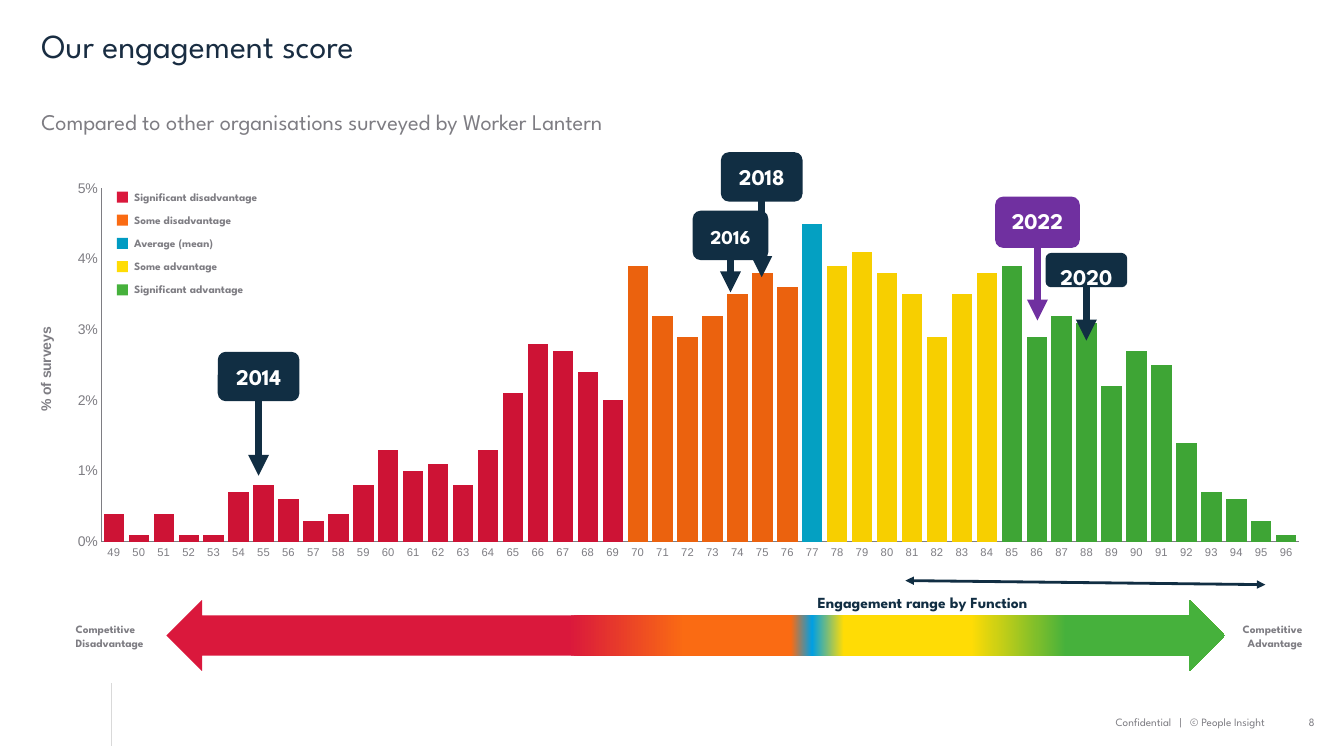
from itertools import chain, repeat

from lxml.etree import SubElement
from pptx import Presentation
from pptx.chart.data import CategoryChartData
from pptx.dml.color import RGBColor
from pptx.enum.chart import XL_CHART_TYPE as ChartType, XL_TICK_MARK as TickMark
from pptx.enum.shapes import MSO_CONNECTOR as Connector, MSO_SHAPE as Shape
from pptx.enum.text import MSO_ANCHOR as Anchor, MSO_AUTO_SIZE as AutoSize, PP_ALIGN as Align
from pptx.oxml.ns import qn
from pptx.util import Inches, Pt

NAVY, GREY, PURPLE, WHITE = "112E43", "7E7D83", "7030A0", "FFFFFF"
LEGEND = [
    ("Significant disadvantage", "DA183C"),
    ("Some disadvantage", "FA6B13"),
    ("Average (mean)", "009BC2"),
    ("Some advantage", "FFDC05"),
    ("Significant advantage", "46B13C"),
]
BAR_BANDS = [("CD1335", 21), ("EB620E", 7), ("04A0C2", 1), ("F7CF00", 7), ("3EA535", 12)]
FIRST_SCORE = 49
SURVEY_SHARES = [
    0.004, 0.001, 0.004, 0.001, 0.001, 0.007, 0.008, 0.006, 0.003, 0.004, 0.008, 0.013,
    0.010, 0.011, 0.008, 0.013, 0.021, 0.028, 0.027, 0.024, 0.020, 0.039, 0.032, 0.029,
    0.032, 0.035, 0.038, 0.036, 0.045, 0.039, 0.041, 0.038, 0.035, 0.029, 0.035, 0.038,
    0.039, 0.029, 0.032, 0.031, 0.022, 0.027, 0.025, 0.014, 0.007, 0.006, 0.003, 0.001,
]
SCALE_STOPS = [
    (38, "DA183C"), (49, "FA6B13"), (59, "FA6B13"), (61, "009FE3"),
    (64, "FFDC05"), (76, "FFDC05"), (85, "46B13C"), (100, "46B13C"),
]
YEAR_MARKERS = [
    ("2022", 9.87, 1.95, 0.84, 0.51, 2.25, 3.18, PURPLE, 16),
    ("2014", 2.16, 3.49, 0.81, 0.49, 3.79, 4.72, NAVY, 16),
    ("2016", 6.87, 2.09, 0.75, 0.49, 2.28, 2.90, NAVY, 14),
    ("2020", 10.37, 2.51, 0.81, 0.34, 2.72, 3.38, NAVY, 16),
    ("2018", 7.15, 1.51, 0.81, 0.49, 1.81, 2.75, NAVY, 16),
]


def rgb(color):
    return RGBColor.from_string(color)


def set_font(font, size, color, name, bold=False):
    font.size, font.name, font.bold = Pt(size), name, bold
    font.color.rgb = rgb(color)


def write(shape, text, size=8, color=GREY, bold=False, align=Align.LEFT, spacing=None,
          wrap=True, anchor=Anchor.TOP, insets=(0, 0, 0, 0), font="League Spartan"):
    frame = shape.text_frame
    frame.text = text
    frame.auto_size, frame.word_wrap, frame.vertical_anchor = AutoSize.NONE, wrap, anchor
    frame.margin_left, frame.margin_top, frame.margin_right, frame.margin_bottom = map(Inches, insets)
    for paragraph in frame.paragraphs:
        paragraph.alignment = align
        if spacing:
            paragraph.line_spacing = Pt(spacing)
        for run in paragraph.runs:
            set_font(run.font, size, color, font, bold)


class ScoreSlide:
    """Holds the current slide and draws its elements in the report style."""

    def __init__(self, presentation):
        self.slide = presentation.slides.add_slide(presentation.slide_layouts[5])
        self.shapes = self.slide.shapes

    def title(self, text, *box):
        title = self.shapes.title
        title.left, title.top, title.width, title.height = map(Inches, box)
        write(title, text, size=24, color="192D42", spacing=28)

    def label(self, text, *box, **style):
        write(self.shapes.add_textbox(*map(Inches, box)), text, **style)

    def block(self, kind, box, color=None, adjustments=()):
        shape = self.shapes.add_shape(kind, *map(Inches, box))
        shape.shadow.inherit = False
        shape.line.fill.background()
        for index, value in enumerate(adjustments):
            shape.adjustments[index] = value
        if color:
            shape.fill.solid()
            shape.fill.fore_color.rgb = rgb(color)
        return shape

    def line(self, start, end, color, width, arrows=()):
        line = self.shapes.add_connector(Connector.STRAIGHT, *map(Inches, start + end))
        line.line.color.rgb = rgb(color)
        line.line.width = Pt(width)
        for arrow in arrows:
            SubElement(line.line._ln, qn(f"a:{arrow}"), type="triangle")
        SubElement(line._element.spPr, qn("a:effectLst"))

    def scale_arrow(self, box, stops):
        arrow = self.block(Shape.LEFT_RIGHT_ARROW, box, adjustments=(0.562, 0.5))
        arrow.fill.gradient()
        arrow.fill.gradient_angle = 0
        stop_list = arrow._element.spPr.find(qn("a:gradFill")).find(qn("a:gsLst"))
        stop_list.clear()
        for position, color in stops:
            stop = SubElement(stop_list, qn("a:gs"), pos=str(position * 1000))
            SubElement(stop, qn("a:srgbClr"), val=color)

    def year_marker(self, year, left, top, width, height, start, tip, color, size):
        middle = left + width / 2
        self.line((middle, start), (middle, tip), color, 5, ["tailEnd"])
        box = self.block(Shape.ROUNDED_RECTANGLE, (left, top, width, height), color, [0.162])
        write(box, year, size=size, color=WHITE, bold=True, align=Align.CENTER, spacing=16,
              wrap=False, insets=(0.13, 0.13, 0.13, 0.09))

    def score_chart(self, box):
        data = CategoryChartData(number_format="0%")
        data.categories = [str(FIRST_SCORE + index) for index in range(len(SURVEY_SHARES))]
        data.add_series("Series 1", SURVEY_SHARES)
        chart = self.shapes.add_chart(ChartType.COLUMN_CLUSTERED, *map(Inches, box), data).chart
        chart.has_legend = chart.has_title = False
        set_font(chart.font, 10, NAVY, "Calibri")
        plot = chart.plots[0]
        plot.gap_width, plot.vary_by_categories = 22, False
        colors = chain.from_iterable(repeat(color, count) for color, count in BAR_BANDS)
        for index, color in enumerate(colors):
            fill = plot.series[0].points[index].format.fill
            fill.solid()
            fill.fore_color.rgb = rgb(color)
        shares = chart.value_axis
        for axis, size in ((chart.category_axis, 8), (shares, 10)):
            axis.has_major_gridlines = False
            axis.major_tick_mark = axis.minor_tick_mark = TickMark.NONE
            axis.format.line.color.rgb = rgb(GREY)
            axis.format.line.width = Pt(0.75)
            set_font(axis.tick_labels.font, size, GREY, "Arial")
        shares.minimum_scale, shares.maximum_scale, shares.major_unit = 0, 0.05, 0.01
        shares.tick_labels.number_format = "0%"
        shares.tick_labels.number_format_is_linked = False
        shares.axis_title.text_frame.text = "% of surveys"
        set_font(shares.axis_title.text_frame.paragraphs[0].runs[0].font, 10, GREY, "Arial", True)
        self.plot_area(chart, x=0.052, y=0.116, w=0.927, h=0.799)

    def plot_area(self, chart, **fractions):
        area = chart._chartSpace.chart.plotArea
        for old in area.findall(qn("c:layout")):
            area.remove(old)
        layout = SubElement(area, qn("c:layout"))
        area.insert(0, layout)
        manual = SubElement(layout, qn("c:manualLayout"))
        SubElement(manual, qn("c:layoutTarget"), val="inner")
        for side in "xy":
            SubElement(manual, qn(f"c:{side}Mode"), val="edge")
        for side, value in fractions.items():
            SubElement(manual, qn(f"c:{side}"), val=str(value))


def main():
    presentation = Presentation()
    presentation.slide_width, presentation.slide_height = Inches(13.33), Inches(7.5)
    page = ScoreSlide(presentation)
    page.line((1.11, 6.78), (1.11, 7.4), "D9D9D9", 0.75)
    footer = {"align": Align.RIGHT, "anchor": Anchor.BOTTOM}
    page.label("8", 12.65, 6.97, 0.39, 0.26, **footer)
    page.label("Confidential   |   © People Insight", 10.3, 6.98, 2.25, 0.25, **footer)
    page.title("Our engagement score", 0.41, 0.26, 12.4, 0.31)
    page.score_chart((0.34, 1.36, 12.81, 4.39))

    page.scale_arrow((1.65, 5.95, 10.5, 0.71), SCALE_STOPS)
    small = {"bold": True, "spacing": 10, "wrap": False}
    page.label("Competitive\nDisadvantage", 0.75, 6.17, 0.82, 0.28, **small)
    page.label("Competitive\nAdvantage", 12.26, 6.17, 0.66, 0.27, align=Align.RIGHT, **small)
    for row, (name, color) in enumerate(LEGEND):
        top = 1.88 + 0.23 * row
        page.label(name, 1.33, top, 1.34, 0.13, **small)
        page.block(Shape.RECTANGLE, (1.16, top + 0.02, 0.11, 0.11), color)

    page.line((8.98, 5.76), (12.55, 5.8), NAVY, 2, ["headEnd", "tailEnd"])
    page.label("Engagement range by Function", 8.11, 5.93, 2.36, 0.14, size=11, color=NAVY, **small)
    page.label("Compared to other organisations surveyed by Worker Lantern",
               0.41, 1.01, 12.51, 0.3, size=16, spacing=24)
    for marker in YEAR_MARKERS:
        page.year_marker(*marker)
    presentation.save("out.pptx")


if __name__ == "__main__":
    main()
